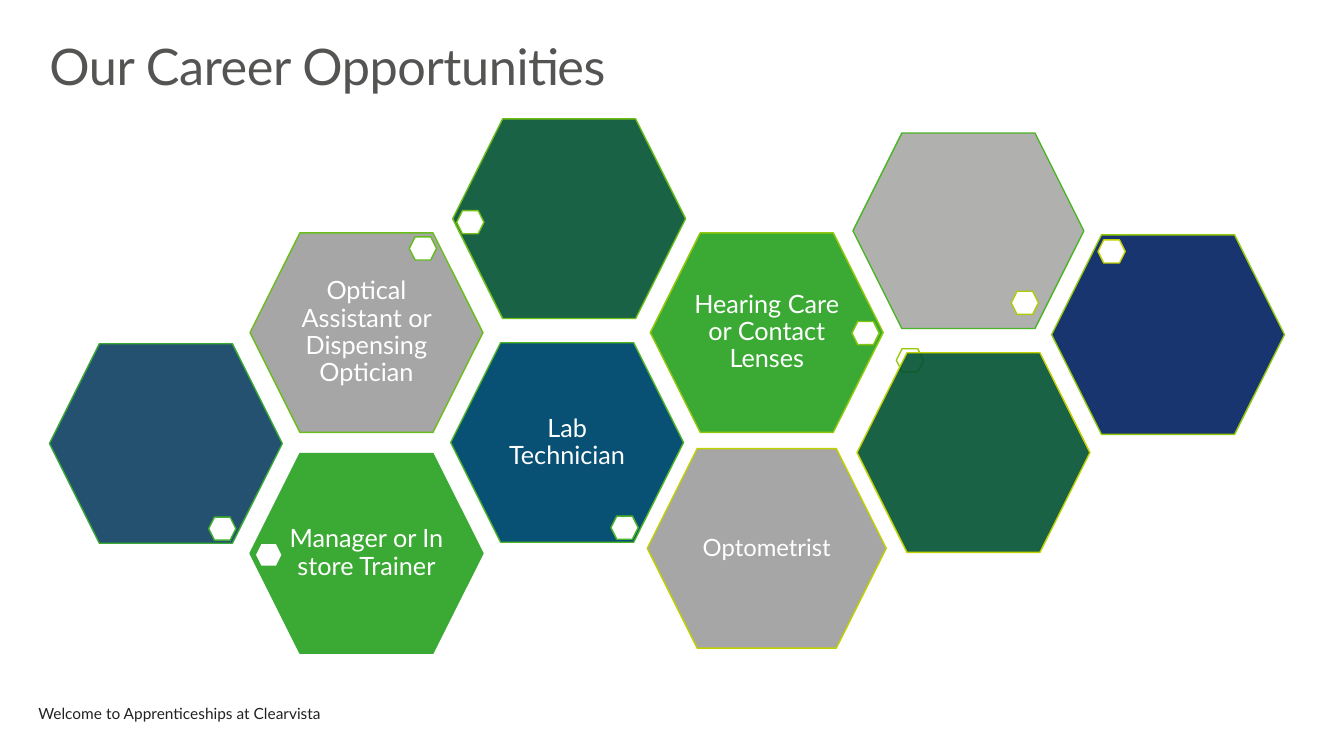
"""Build the career opportunities slide as a honeycomb of hexagons."""
from lxml.etree import SubElement
from pptx import Presentation
from pptx.dml.color import RGBColor
from pptx.enum.shapes import MSO_SHAPE as Shape
from pptx.enum.text import MSO_ANCHOR as Anchor, PP_ALIGN as Align
from pptx.oxml.ns import qn
from pptx.util import Inches, Pt

TITLE = "Our Career Opportunities"
FOOTER = "Welcome to Apprenticeships at Clearvista"
FONT = "Lato"
WHITE = RGBColor(0xFF, 0xFF, 0xFF)
TITLE_GREY = RGBColor(0x54, 0x54, 0x53)
FOOTER_BLACK = RGBColor(0x22, 0x22, 0x22)
GREEN = RGBColor(0x3B, 0xAA, 0x34)
GREY = RGBColor(0xA6, 0xA6, 0xA6)
PALE_GREY = RGBColor(0xA8, 0xA8, 0xA7)
STEEL = RGBColor(0x0D, 0x3F, 0x61)
BLUE = RGBColor(0x09, 0x51, 0x74)
NAVY = RGBColor(0x00, 0x20, 0x60)
FOREST = RGBColor(0x01, 0x51, 0x31)
LEAF = RGBColor(0x4D, 0xB4, 0x26)
GRASS = RGBColor(0x6A, 0xBE, 0x19)
LIME = RGBColor(0x91, 0xC8, 0x0C)
YELLOW = RGBColor(0xC1, 0xD1, 0x00)

CELL = (2.31, 1.98)
DOT = (0.27, 0.23)
OPACITY = 90

# label, left, top, size, fill, outline, dot position, dot outline
CELLS = [
    ("Manager or In store Trainer", 2.48, 4.5, CELL, GREEN, GREEN, (2.53, 5.39), GREEN),
    ("", 0.49, 3.41, CELL, STEEL, GREEN, (2.07, 5.13), RGBColor(0x42, 0xAF, 0x2E)),
    ("Lab Technician", 4.47, 3.4, CELL, BLUE, LEAF, (6.06, 5.12), RGBColor(0x4B, 0xB3, 0x28)),
    ("", 8.46, 1.32, (2.29, 1.94), PALE_GREY, LEAF, None, None),
    ("Optical Assistant or Dispensing Optician", 2.48, 2.31, CELL, GREY, GRASS,
     (4.06, 2.35), RGBColor(0x63, 0xBC, 0x1C)),
    ("", 4.49, 1.18, CELL, FOREST, GRASS, (4.53, 2.09), RGBColor(0x72, 0xC0, 0x16)),
    ("Hearing Care or Contact Lenses", 6.45, 2.31, CELL, GREEN, LIME,
     (8.45, 3.19), RGBColor(0x83, 0xC5, 0x11)),
    ("", 10.43, 2.33, CELL, NAVY, LIME, (8.89, 3.46), RGBColor(0x96, 0xC9, 0x0B)),
    ("Optometrist", 6.42, 4.45, (2.37, 1.98), GREY, YELLOW,
     (10.03, 2.89), RGBColor(0xAB, 0xCD, 0x05)),
    ("", 8.5, 3.5, CELL, FOREST, YELLOW, (10.89, 2.38), YELLOW),
]


def write(shape, text, size, color, align=Align.LEFT, spacing=None, inset=0, tracking=None):
    frame = shape.text_frame
    frame.word_wrap = True
    frame.vertical_anchor = Anchor.MIDDLE
    frame.margin_left = frame.margin_right = 0
    frame.margin_top = frame.margin_bottom = Inches(inset)
    para = frame.paragraphs[0]
    para.alignment = align
    if spacing:
        para.line_spacing = spacing
    span = para.add_run()
    span.text = text
    span.font.name = FONT
    span.font.size = Pt(size)
    span.font.color.rgb = color
    if tracking:
        span.font._element.set("spc", str(tracking))


def add_hexagon(page, left, top, size, fill, outline, opacity=100):
    hexagon = page.shapes.add_shape(Shape.HEXAGON, *map(Inches, (left, top, *size)))
    hexagon.adjustments[0] = 0.25
    hexagon.shadow.inherit = False
    hexagon.fill.solid()
    hexagon.fill.fore_color.rgb = fill
    hexagon.line.color.rgb = outline
    hexagon.line.width = Pt(1)
    if opacity < 100:
        color = hexagon._element.spPr.find(qn("a:solidFill")).find(qn("a:srgbClr"))
        SubElement(color, qn("a:alpha")).set("val", str(opacity * 1000))
    return hexagon


def add_text(page, left, top, width, height, text, **style):
    box = page.shapes.add_textbox(*map(Inches, (left, top, width, height)))
    write(box, text, **style)


def main():
    deck = Presentation()
    deck.slide_width, deck.slide_height = Inches(13.33), Inches(7.5)
    page = deck.slides.add_slide(deck.slide_layouts[6])
    add_text(page, 0.49, 0.49, 12.25, 0.42, TITLE, size=36, color=TITLE_GREY,
             spacing=Pt(36), tracking=-30)
    for label, left, top, size, fill, outline, dot, dot_outline in CELLS:
        cell = add_hexagon(page, left, top, size, fill, outline, 100 if label else OPACITY)
        if label:
            write(cell, label, size=17 if label == "Optometrist" else 18, color=WHITE,
                  align=Align.CENTER, spacing=0.9, inset=0.03)
        if dot:
            add_hexagon(page, *dot, DOT, WHITE, dot_outline)
    add_text(page, 0.38, 7.02, 12.25, 0.11, FOOTER, size=11, color=FOOTER_BLACK)
    deck.save("out.pptx")


if __name__ == "__main__":
    main()
